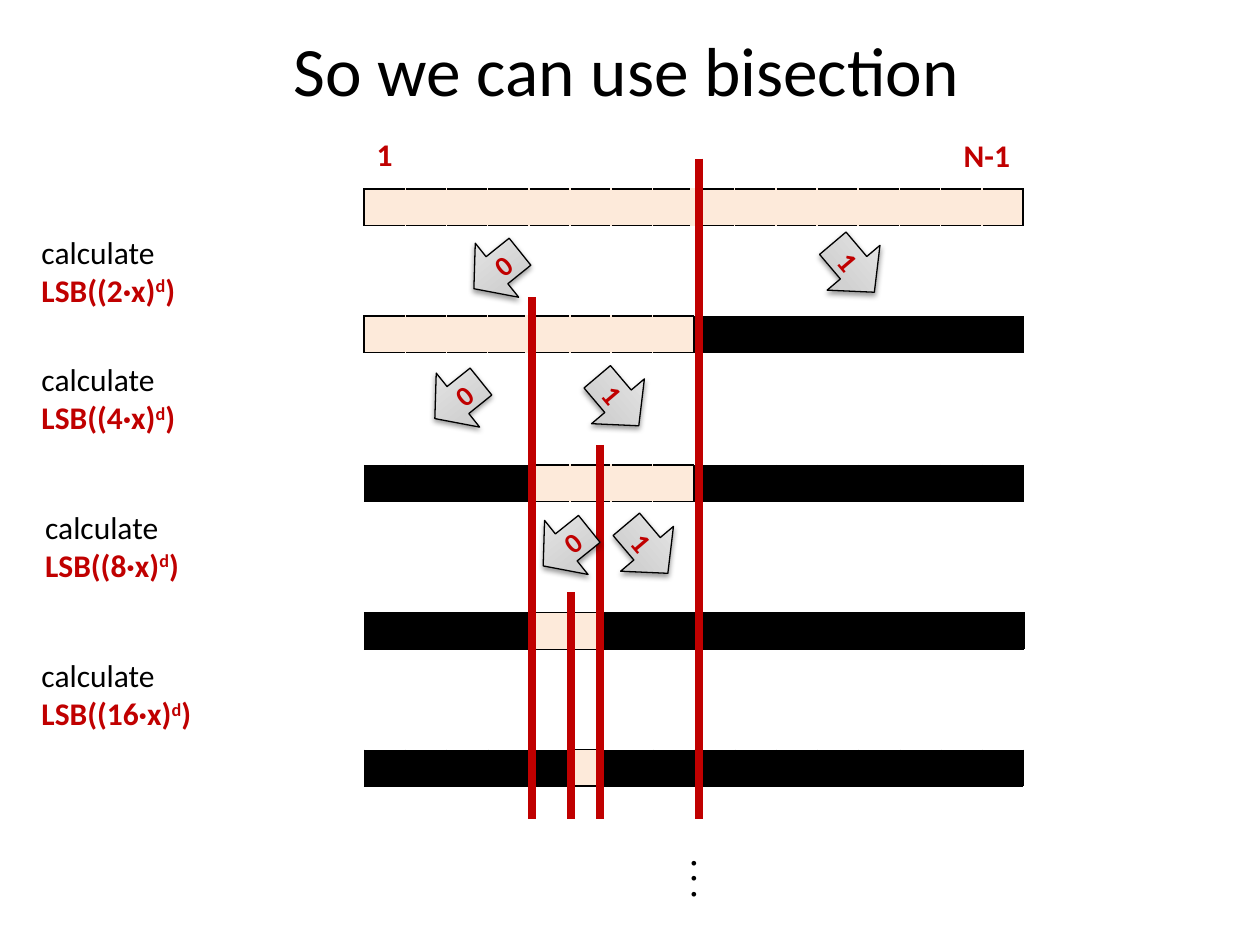
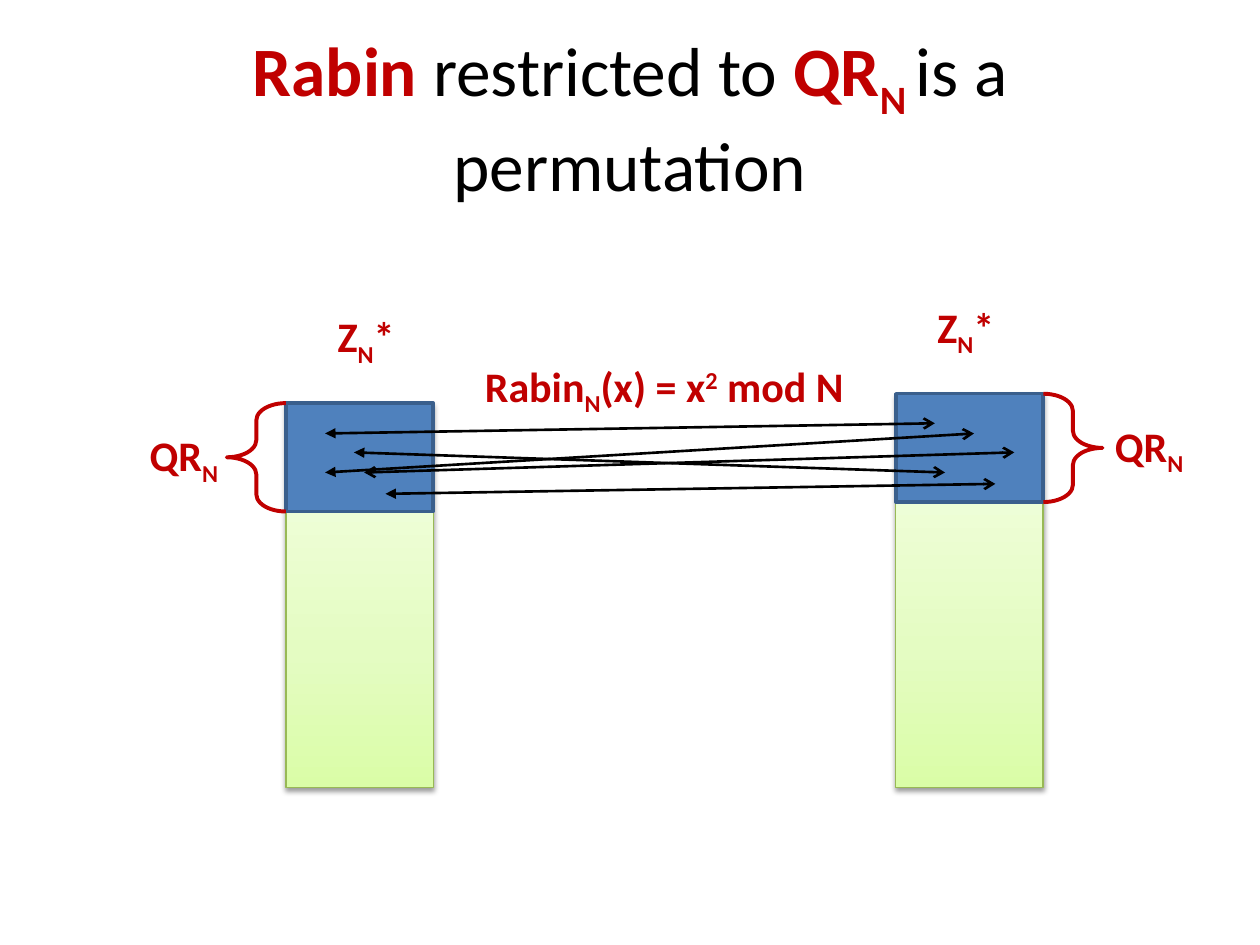
"""Build two slides: bisection on LSB answers, and Rabin as a permutation of QR_N."""
from dataclasses import dataclass
from typing import NamedTuple

from lxml import etree
from pptx import Presentation
from pptx.dml.color import RGBColor
from pptx.enum.shapes import MSO_CONNECTOR, MSO_SHAPE
from pptx.enum.text import MSO_ANCHOR, MSO_AUTO_SIZE, PP_ALIGN
from pptx.oxml.ns import qn
from pptx.shapes.autoshape import Shape
from pptx.slide import Slide
from pptx.text.text import _Paragraph
from pptx.util import Pt

STRAIGHT = MSO_CONNECTOR.STRAIGHT
RECTANGLE = MSO_SHAPE.RECTANGLE
LEFT_ARROW, RIGHT_ARROW = MSO_SHAPE.LEFT_ARROW, MSO_SHAPE.RIGHT_ARROW
LEFT_BRACE, RIGHT_BRACE = MSO_SHAPE.LEFT_BRACE, MSO_SHAPE.RIGHT_BRACE
MIDDLE = MSO_ANCHOR.MIDDLE
CENTER = PP_ALIGN.CENTER
NO_FIT, GROW = MSO_AUTO_SIZE.NONE, MSO_AUTO_SIZE.SHAPE_TO_FIT_TEXT

BLACK = RGBColor(0x00, 0x00, 0x00)
RED = RGBColor(0xC0, 0x00, 0x00)
CREAM = RGBColor(0xFD, 0xEA, 0xDA)
BLUE = RGBColor(0x4F, 0x81, 0xBD)
BLUE_EDGE = RGBColor(0x3A, 0x5F, 0x8C)
GREEN_EDGE = RGBColor(0x98, 0xB9, 0x55)
GREENS = (RGBColor(0xDA, 0xFD, 0xA7), RGBColor(0xE4, 0xFC, 0xC2), RGBColor(0xF5, 0xFF, 0xE7))
GREYS = (RGBColor(0xBD, 0xBD, 0xBD), RGBColor(0xD1, 0xD1, 0xD1), RGBColor(0xEE, 0xEE, 0xEE))
STOPS = (0, 35, 100)

FONT = "Calibri"
TITLE_SIZE = 39.6
CELLS = 16
BAR_LEFT, BAR_HEIGHT, CELL_WIDTH = 208.1, 16, 23.54
CUT_BOTTOM = 468
TOWER_WIDTH, TOWER_BOTTOM, CAP_HEIGHT, BRACE_WIDTH = 84.2, 450, 61.9, 33.8


class Box(NamedTuple):
    """Position and size in points."""

    left: float
    top: float
    width: float
    height: float

    def lengths(self) -> list[Pt]:
        return [Pt(value) for value in self]


class Span(NamedTuple):
    """A piece of text with one format."""

    text: str
    color: RGBColor = RED
    bold: bool = True
    baseline: int = 0


@dataclass(frozen=True)
class Bar:
    """One row of candidates, of which cells first to last - 1 remain."""

    top: float
    first: int
    last: int
    outline: float = 1
    middle: int = 0
    shift: float = 0


class Cut(NamedTuple):
    """A vertical bisection line."""

    x: float
    top: float


class Answer(NamedTuple):
    """An arrow for one value of the bit."""

    bit: int
    left: float
    top: float


class Mapping(NamedTuple):
    """A line between two elements of QR_N."""

    start: tuple[float, float]
    end: tuple[float, float]
    head: str = "triangle"


class Tower(NamedTuple):
    """A copy of the group with its residues on top."""

    left: float
    top: float
    brace: MSO_SHAPE
    brace_left: float
    label_left: float
    name_left: float


BARS = (
    Bar(108, 0, 16, middle=8),
    Bar(180.7, 0, 8, middle=4),
    Bar(265.7, 4, 8),
    Bar(349.9, 4, 6, outline=0.25, shift=6.8),
    Bar(428.4, 5, 6, shift=6.5),
)
CUTS = (Cut(399.6, 90.7), Cut(303.8, 169.9), Cut(343, 254.2), Cut(326.2, 338.4))
ANSWERS = (
    Answer(0, 267.1, 134.6), Answer(1, 469.4, 133.2),
    Answer(0, 244.8, 208.8), Answer(1, 334.8, 209.5),
    Answer(0, 306.7, 293), Answer(1, 351.4, 293.8),
)
STEPS = (
    (2, Box(16.6, 129.6, 92.9, 51.1)),
    (4, Box(16.6, 202.3, 92.9, 51.1)),
    (8, Box(18.7, 286.6, 92.9, 51.1)),
    (16, Box(16.6, 371.5, 102.2, 51.1)),
)
TOWERS = (
    Tower(511.9, 225, RIGHT_BRACE, 596.2, 630, 528.5),
    Tower(163.4, 230.4, LEFT_BRACE, 129.6, 78.5, 185.8),
)
MAPPINGS = (
    Mapping((202.3, 258.5), (540, 270)),
    Mapping((208.1, 270), (579.6, 258.5), "arrow"),
    Mapping((220.3, 282.2), (568.8, 276.5)),
    Mapping((185.8, 270), (556.6, 247.7)),
    Mapping((185.8, 247.7), (534.2, 241.9)),
)
SUB_N = Span("N", baseline=-25)


def write_spans(para: _Paragraph, spans: tuple[Span, ...], size: float) -> None:
    """Fill a paragraph with formatted spans."""
    for span in spans:
        run = para.add_run()
        run.text = span.text
        run.font.name, run.font.size = FONT, Pt(size)
        run.font.bold, run.font.color.rgb = span.bold, span.color
        if span.baseline:
            run._r.get_or_add_rPr().set("baseline", str(span.baseline * 1000))


def add_title(page: Slide, box: Box, *spans: Span) -> None:
    """Move the title placeholder and write it."""
    title = page.shapes.title
    title.left, title.top, title.width, title.height = box.lengths()
    frame = title.text_frame
    frame.auto_size, frame.vertical_anchor = NO_FIT, MIDDLE
    para = frame.paragraphs[0]
    para.alignment = CENTER
    write_spans(para, spans, TITLE_SIZE)


def add_label(page: Slide, box: Box, size: float, *lines: tuple[Span, ...]) -> Shape:
    """Add a text box with one paragraph for each line."""
    label = page.shapes.add_textbox(*box.lengths())
    frame = label.text_frame
    frame.word_wrap, frame.auto_size = False, GROW
    for number, spans in enumerate(lines):
        para = frame.add_paragraph() if number else frame.paragraphs[0]
        write_spans(para, spans, size)
    return label


def add_line(page: Slide, start: tuple[float, float], end: tuple[float, float],
             color: RGBColor, width: float, head: str = "", tail: str = "") -> None:
    """Add a straight line, with arrowheads if they are named."""
    line = page.shapes.add_connector(STRAIGHT, *(Pt(value) for value in start + end))
    line.line.color.rgb, line.line.width = color, Pt(width)
    outline = line.line._get_or_add_ln()
    for tag, kind in (("a:headEnd", head), ("a:tailEnd", tail)):
        if kind:
            etree.SubElement(outline, qn(tag), type=kind)
    etree.SubElement(line._element.spPr, qn("a:effectLst"))


def add_figure(page: Slide, kind: MSO_SHAPE, box: Box, edge: RGBColor, width: float) -> Shape:
    """Add a preset shape with an outline and no shadow."""
    figure = page.shapes.add_shape(kind, *box.lengths())
    figure.shadow.inherit = False
    figure.line.color.rgb, figure.line.width = edge, Pt(width)
    return figure


def add_color(parent: etree._Element, color: RGBColor) -> etree._Element:
    """Append a colour element."""
    return etree.SubElement(parent, qn("a:srgbClr"), val=str(color))


def shade(figure: Shape, colors: tuple[RGBColor, ...]) -> None:
    """Give a shape an upward gradient and a soft shadow."""
    figure.fill.gradient()
    figure.fill.gradient_angle = 90
    properties = figure._element.spPr
    stops = properties.find(qn("a:gradFill")).find(qn("a:gsLst"))
    for stop in list(stops):
        stops.remove(stop)
    for position, color in zip(STOPS, colors):
        add_color(etree.SubElement(stops, qn("a:gs"), pos=str(position * 1000)), color)
    shadow = etree.SubElement(properties.find(qn("a:effectLst")), qn("a:outerShdw"),
                              blurRad=str(Pt(3.1)), dist=str(Pt(1.6)), dir="5400000", rotWithShape="0")
    etree.SubElement(add_color(shadow, BLACK), qn("a:alpha"), val="38000")


def cell_borders(bar: Bar, column: int) -> dict[str, tuple[RGBColor, float]]:
    """Work out the borders of one cell of a bar."""
    if not bar.first <= column < bar.last:
        return {tag: (BLACK, 0.25) for tag in ("a:lnL", "a:lnR", "a:lnT", "a:lnB")}

    def side(seam: int) -> tuple[RGBColor, float]:
        if seam in (bar.first, bar.last):
            return BLACK, 1 if seam in (0, CELLS) else 0.25
        return CREAM, 4.5 if seam == bar.middle else bar.outline

    level = (BLACK, bar.outline)
    return {"a:lnL": side(column), "a:lnR": side(column + 1), "a:lnT": level, "a:lnB": level}


def add_bar(page: Slide, bar: Bar) -> None:
    """Add a bar as a table of one row."""
    box = Box(BAR_LEFT, bar.top, CELLS * CELL_WIDTH, BAR_HEIGHT)
    table = page.shapes.add_table(1, CELLS, *box.lengths()).table
    table.first_row = table.horz_banding = False
    for column, cell in enumerate(table.rows[0].cells):
        change = {5: -bar.shift, 6: bar.shift}.get(column, 0)
        table.columns[column].width = Pt(CELL_WIDTH + change)
        etree.SubElement(cell.text_frame.paragraphs[0]._p, qn("a:endParaRPr"), sz="1100")
        properties = cell._tc.get_or_add_tcPr()
        for tag, (color, width) in cell_borders(bar, column).items():
            border = etree.SubElement(properties, qn(tag), w=str(Pt(width)))
            add_color(etree.SubElement(border, qn("a:solidFill")), color)
        cell.fill.solid()
        cell.fill.fore_color.rgb = CREAM if bar.first <= column < bar.last else BLACK


def add_answer(page: Slide, answer: Answer) -> None:
    """Add a tilted arrow that carries a bit."""
    kind, width, angle = ((LEFT_ARROW, 33.8, 321.2), (RIGHT_ARROW, 36.7, 49.7))[answer.bit]
    arrow = add_figure(page, kind, Box(answer.left, answer.top, width, 39.6), BLACK, 0.75)
    shade(arrow, GREYS)
    arrow.rotation = angle
    arrow.text_frame.vertical_anchor = MIDDLE
    para = arrow.text_frame.paragraphs[0]
    para.alignment = CENTER
    write_spans(para, (Span(str(answer.bit)),), 16)


def add_tower(page: Slide, tower: Tower) -> None:
    """Add a group, its residues, its brace and its labels."""
    body = Box(tower.left, tower.top, TOWER_WIDTH, TOWER_BOTTOM - tower.top)
    shade(add_figure(page, RECTANGLE, body, GREEN_EDGE, 0.75), GREENS)
    cap = add_figure(page, RECTANGLE, body._replace(height=CAP_HEIGHT), BLUE_EDGE, 2)
    cap.fill.solid()
    cap.fill.fore_color.rgb = BLUE
    brace = add_figure(page, tower.brace, Box(tower.brace_left, tower.top, BRACE_WIDTH, CAP_HEIGHT), RED, 2.25)
    brace.fill.background()
    brace.adjustments[0] = 0.29
    add_label(page, Box(tower.label_left, tower.top + 11.5, 55.4, 36), 24, (Span("QR"), SUB_N))
    add_label(page, Box(tower.name_left, tower.top - 56.3, 49, 36), 24, (Span("Z"), SUB_N, Span("*")))


def build_bisection(page: Slide) -> None:
    """Draw the bisection slide."""
    add_title(page, Box(34, 16.5, 648, 45.4), Span("So we can use bisection", BLACK, False))
    for bar in BARS:
        add_bar(page, bar)
    for cut in CUTS:
        add_line(page, cut, (cut.x, CUT_BOTTOM), RED, 4.5)
    add_label(page, Box(208.1, 73.4, 23.8, 28.8), 18, (Span("1"),))
    add_label(page, Box(543.6, 74.2, 41, 28.8), 18, (Span("N-1"),))
    add_label(page, Box(383.8, 488.2, 37.4, 28.8), 18, (Span(". . .", BLACK),)).rotation = 90
    for factor, box in STEPS:
        add_label(page, box, 18, (Span("calculate", BLACK, False),),
                  (Span(f"LSB(({factor}·x)"), Span("d", baseline=30), Span(")")))
    for answer in ANSWERS:
        add_answer(page, answer)


def build_permutation(page: Slide) -> None:
    """Draw the permutation slide."""
    add_title(page, Box(36, 21.6, 648, 90), Span("Rabin "), Span("restricted to ", BLACK, False),
              Span("QR"), Span("N ", baseline=-25), Span("is a permutation", BLACK, False))
    for tower in TOWERS:
        add_tower(page, tower)
    add_label(page, Box(270, 202.3, 223.9, 36), 24,
              (Span("Rabin"), SUB_N, Span("(x) = x"), Span("2", baseline=30), Span(" mod N")))
    for mapping in MAPPINGS:
        add_line(page, mapping.start, mapping.end, BLACK, 1.5, mapping.head, "arrow")


def main() -> None:
    """Build and save the deck."""
    deck = Presentation()
    deck.slide_width, deck.slide_height = Pt(720), Pt(540)
    for build in (build_bisection, build_permutation):
        build(deck.slides.add_slide(deck.slide_layouts[5]))
    deck.save("out.pptx")


if __name__ == "__main__":
    main()
